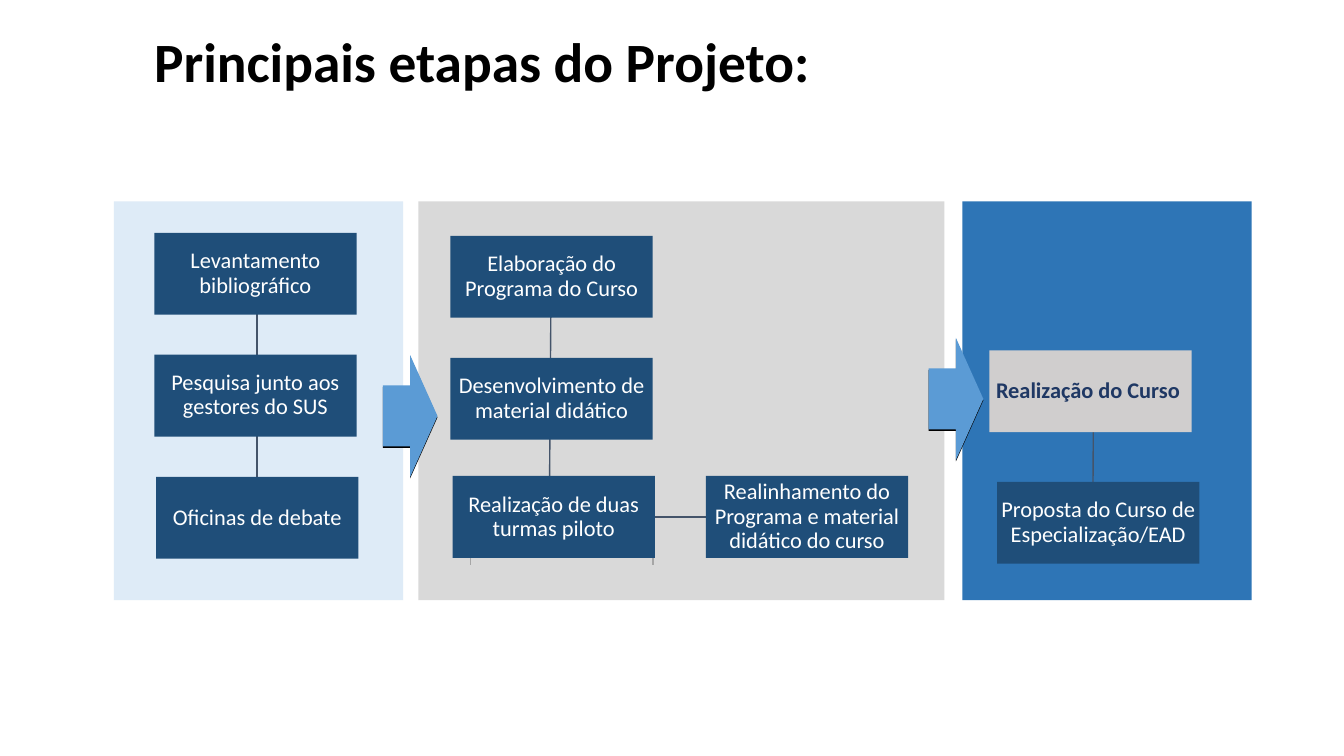
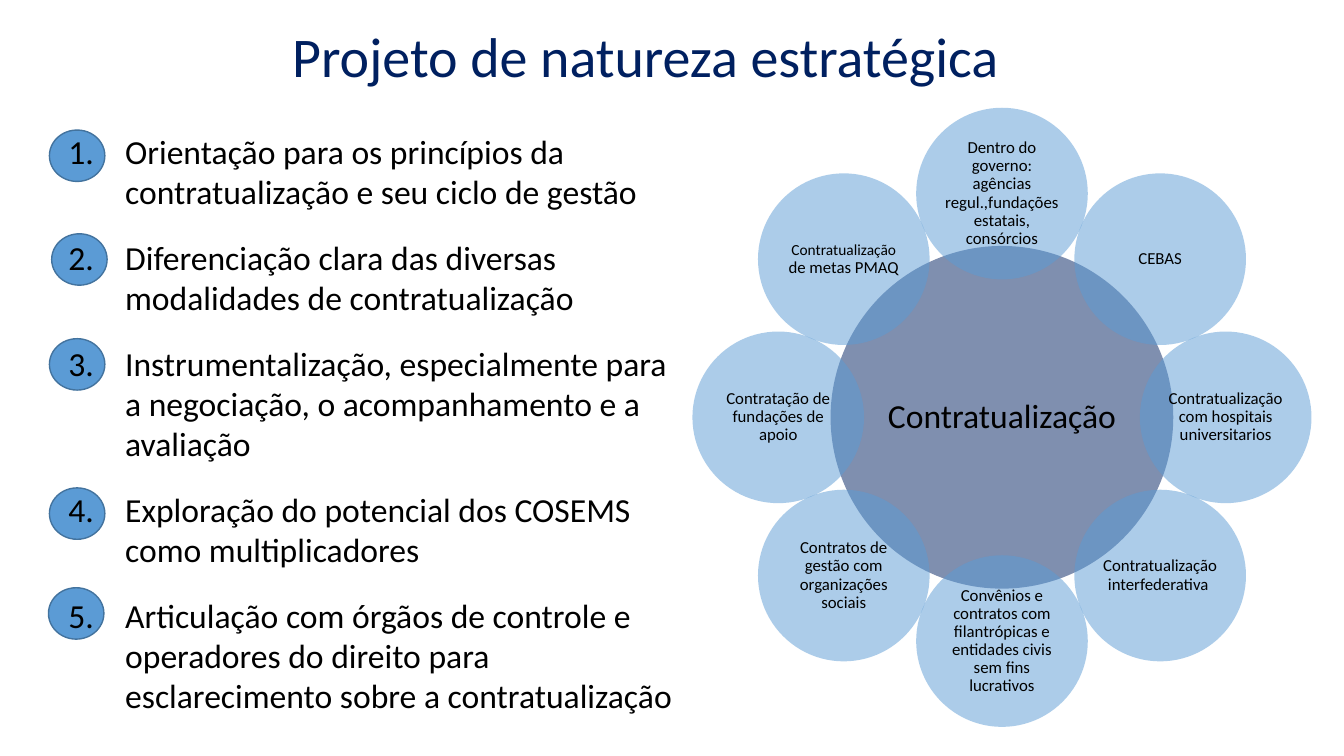
"""Build two slides: the stages of a project and its strategic nature."""
import math
from typing import NamedTuple, Optional

from lxml import etree
from pptx import Presentation
from pptx import dml
from pptx import slide as sl
from pptx import util as u
from pptx.dml import color as co
from pptx.enum import shapes, text
from pptx.oxml import ns
from pptx.shapes import autoshape as auto
from pptx.text import text as tx

FONT = "Calibri"
BLACK = co.RGBColor(0x00, 0x00, 0x00)
WHITE = co.RGBColor(0xFF, 0xFF, 0xFF)
NAVY = co.RGBColor(0x00, 0x20, 0x60)
INK = co.RGBColor(0x1F, 0x38, 0x64)
DARK_BLUE = co.RGBColor(0x1F, 0x4E, 0x79)
MID_BLUE = co.RGBColor(0x2E, 0x75, 0xB6)
BLUE = co.RGBColor(0x5B, 0x9B, 0xD5)
PALE_BLUE = co.RGBColor(0xDE, 0xEB, 0xF7)
RIM = co.RGBColor(0x43, 0x73, 0x9E)
SLATE = co.RGBColor(0x44, 0x54, 0x6A)
LIGHT_GREY = co.RGBColor(0xD9, 0xD9, 0xD9)
WARM_GREY = co.RGBColor(0xD0, 0xCE, 0xCE)
LINE_GREY = co.RGBColor(0xA6, 0xA6, 0xA6)

RECT = shapes.MSO_SHAPE.RECTANGLE
OVAL = shapes.MSO_SHAPE.OVAL
ARROW = shapes.MSO_SHAPE.RIGHT_ARROW


class Frame(NamedTuple):
    left: float
    top: float
    width: float
    height: float


class Style(NamedTuple):
    size: float
    color: co.RGBColor = BLACK
    bold: bool = False


class Panel(NamedTuple):
    left: float
    width: float
    color: co.RGBColor


class Step(NamedTuple):
    left: float
    top: float
    label: str
    fill: co.RGBColor = DARK_BLUE
    style: Style = Style(16, WHITE)


class Petal(NamedTuple):
    label: str
    lead: str = ""


PANEL_TOP, PANEL_HEIGHT = 143.8, 285
PANELS = [
    Panel(81.4, 206.6, PALE_BLUE),
    Panel(298.8, 375.8, LIGHT_GREY),
    Panel(687.5, 206.6, MID_BLUE),
]
STEP_WIDTH, STEP_HEIGHT = 144.5, 58.5
STEPS = [
    Step(110.2, 166.3, "Levantamento bibliográfico"),
    Step(110.2, 253.4, "Pesquisa junto aos gestores do SUS"),
    Step(111.6, 340.6, "Oficinas de debate"),
    Step(321.8, 168.5, "Elaboração do Programa do Curso"),
    Step(321.8, 255.6, "Desenvolvimento de material didático"),
    Step(323.3, 340, "Realização de duas turmas piloto"),
    Step(504.2, 340, "Realinhamento do Programa e material didático do curso"),
    Step(706.7, 250.2, "Realização do Curso ", WARM_GREY, Style(16, INK, True)),
    Step(712.2, 344.2, "Proposta do Curso de Especialização/EAD"),
]
LINKS = [
    (468, 369.4, 531.4, 369.4),
    (781.2, 262.8, 780.5, 387.4),
    (393.8, 180.7, 392.4, 363.6),
    (183.6, 211.7, 183.6, 398.9),
]
ELBOWS = [(400.3, 336.2), (401.8, 466.4)]
ARROWS = [Frame(273.4, 253.6, 39.1, 87.1), Frame(663.3, 241.4, 39.1, 87.1)]

HUB_X, HUB_Y = 715.7, 298.1
HUB_SIZE, PETAL_SIZE, RING_RADIUS = 244.8, 122.6, 159.8
PETALS = [
    Petal("Dentro do governo: agências regul.,fundações estatais, consórcios"),
    Petal("CEBAS"),
    Petal("Contratualização com hospitais universitarios"),
    Petal("Contratualização interfederativa "),
    Petal("Convênios e contratos com filantrópicas e entidades civis sem fins lucrativos"),
    Petal("Contratos de gestão com organizações sociais"),
    Petal("Contratação de fundações de apoio"),
    Petal(" de metas PMAQ", "Contratualização"),
]
BADGES = [(35.3, 92.9), (36.9, 167), (35.3, 241.9), (35.3, 348.5), (34.6, 419.8)]
GOALS = [
    "Orientação para os princípios da contratualização e seu ciclo de gestão",
    "Diferenciação clara das diversas modalidades de contratualização",
    "Instrumentalização, especialmente para a negociação, o acompanhamento e a avaliação",
    "Exploração do potencial dos COSEMS como multiplicadores",
    "Articulação com órgãos de controle e operadores do direito para "
    "esclarecimento sobre a contratualização",
]


def points(*values: float) -> list[u.Length]:
    return [u.Pt(value) for value in values]


def format_runs(para: tx._Paragraph, style: Style) -> None:
    for span in para.runs:
        span.font.name = FONT
        span.font.size = u.Pt(style.size)
        span.font.bold = style.bold
        span.font.color.rgb = style.color


def add_box(page: sl.Slide, frame: Frame) -> auto.Shape:
    box = page.shapes.add_textbox(*points(*frame))
    box.text_frame.word_wrap = True
    return box


def add_title(page: sl.Slide, frame: Frame, title: str, style: Style, spacing: float) -> None:
    para = add_box(page, frame).text_frame.paragraphs[0]
    para.text = title
    para.line_spacing = spacing
    format_runs(para, style)


def add_shape(page: sl.Slide, kind: shapes.MSO_SHAPE, frame: Frame, fill: co.RGBColor,
              alpha: Optional[int] = None) -> auto.Shape:
    shape = page.shapes.add_shape(kind, *points(*frame))
    shape.shadow.inherit = False
    shape.fill.solid()
    shape.fill.fore_color.rgb = fill
    shape.line.fill.background()
    if alpha is not None:
        tint = shape._element.spPr.find(".//" + ns.qn("a:srgbClr"))
        etree.SubElement(tint, ns.qn("a:alpha"), val=str(alpha * 1000))
    return shape


def set_label(shape: auto.Shape, label: str, style: Style, inset: float = 0) -> tx._Paragraph:
    frame = shape.text_frame
    frame.word_wrap = True
    frame.vertical_anchor = text.MSO_ANCHOR.MIDDLE
    frame.margin_left = frame.margin_right = u.Pt(inset)
    frame.margin_top = frame.margin_bottom = u.Pt(inset)
    para = frame.paragraphs[0]
    para.text = label
    para.alignment = text.PP_ALIGN.CENTER
    para.line_spacing = 0.9
    format_runs(para, style)
    return para


def add_link(page: sl.Slide, ends: tuple[float, float, float, float]) -> None:
    link = page.shapes.add_connector(shapes.MSO_CONNECTOR.STRAIGHT, *points(*ends))
    link.line.color.rgb = SLATE
    link.line.width = u.Pt(1)
    etree.SubElement(link._element.spPr, ns.qn("a:effectLst"))


def add_elbow(page: sl.Slide, start: float, end: float) -> None:
    top, bend, bottom = 377.3, 390.2, 403.9
    builder = page.shapes.build_freeform(u.Pt(start), u.Pt(top))
    corners = [(start, bend), (end, bend), (end, bottom)]
    builder.add_line_segments([tuple(points(*corner)) for corner in corners], close=False)
    elbow = builder.convert_to_shape()
    elbow.shadow.inherit = False
    elbow.fill.background()
    elbow.line.color.rgb = LINE_GREY
    elbow.line.width = u.Pt(1)


def add_arrow(page: sl.Slide, frame: Frame) -> None:
    arrow = add_shape(page, ARROW, frame, BLUE)
    effects = arrow._element.spPr.find(ns.qn("a:effectLst"))
    shadow = etree.SubElement(effects, ns.qn("a:outerShdw"), blurRad="0",
                              dist=str(u.Pt(1)), dir="5400000", rotWithShape="0")
    etree.SubElement(shadow, ns.qn("a:srgbClr"), val=str(BLACK))


def add_circle(page: sl.Slide, x: float, y: float, size: float, fill: co.RGBColor) -> auto.Shape:
    return add_shape(page, OVAL, Frame(x - size / 2, y - size / 2, size, size), fill, alpha=50)


def add_goals(page: sl.Slide) -> None:
    frame = add_box(page, Frame(41.8, 90, 458, 429)).text_frame
    for index, goal in enumerate(GOALS):
        para = frame.add_paragraph() if index else frame.paragraphs[0]
        para.text = goal
        props = para._p.get_or_add_pPr()
        props.set("marL", str(u.Pt(40.5)))
        props.set("indent", str(-u.Pt(40.5)))
        etree.SubElement(props, ns.qn("a:buFont"), typeface=FONT)
        etree.SubElement(props, ns.qn("a:buAutoNum"), type="arabicPeriod")
        para.space_after = u.Pt(18)
        format_runs(para, Style(24))


def build_stages(page: sl.Slide) -> None:
    add_title(page, Frame(103, 21, 828, 54), "Principais etapas do Projeto:",
              Style(39.6, BLACK, True), 0.9)
    for panel in PANELS:
        add_shape(page, RECT, Frame(panel.left, PANEL_TOP, panel.width, PANEL_HEIGHT), panel.color)
    for ends in LINKS:
        add_link(page, ends)
    for start, end in ELBOWS:
        add_elbow(page, start, end)
    for step in STEPS:
        frame = Frame(step.left, step.top, STEP_WIDTH, STEP_HEIGHT)
        set_label(add_shape(page, RECT, frame, step.fill), step.label, step.style)
    for frame in ARROWS:
        add_arrow(page, frame)


def build_strategy(page: sl.Slide) -> None:
    hub = add_circle(page, HUB_X, HUB_Y, HUB_SIZE, NAVY)
    set_label(hub, "Contratualização", Style(24), 2.4)
    for index, petal in enumerate(PETALS):
        angle = math.tau * index / len(PETALS)
        x = HUB_X + RING_RADIUS * math.sin(angle)
        y = HUB_Y - RING_RADIUS * math.cos(angle)
        circle = add_circle(page, x, y, PETAL_SIZE, BLUE)
        para = set_label(circle, petal.lead or petal.label, Style(12), 1.2)
        if petal.lead:
            para.add_run().text = petal.label
            format_runs(para, Style(12))
            para.runs[0].font.size = u.Pt(11)
    add_title(page, Frame(201.6, 11.5, 537, 55.5), "Projeto de natureza estratégica",
              Style(40, NAVY), 1.0)
    for left, top in BADGES:
        badge = add_shape(page, OVAL, Frame(left, top, 39.6, 36.7), BLUE)
        badge.line.color.rgb = RIM
        badge.line.width = u.Pt(1)
    add_goals(page)


def main() -> None:
    deck = Presentation()
    deck.slide_width, deck.slide_height = points(960, 540)
    blank = deck.slide_layouts[6]
    for build in (build_stages, build_strategy):
        build(deck.slides.add_slide(blank))
    deck.save("out.pptx")


if __name__ == "__main__":
    main()
